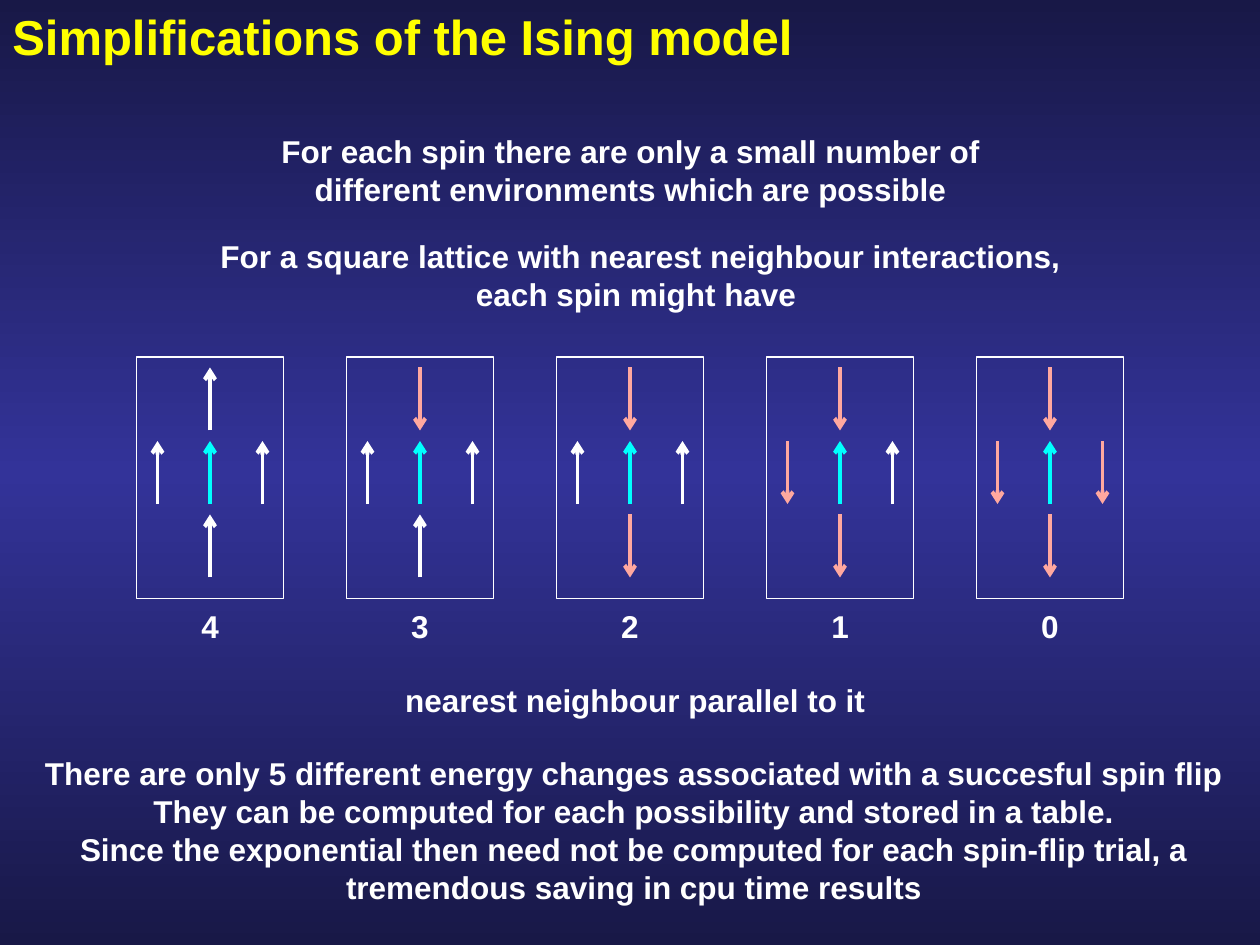
from copy import deepcopy
from dataclasses import dataclass

from pptx import Presentation
from pptx.dml.color import RGBColor
from pptx.enum.shapes import MSO_CONNECTOR, MSO_SHAPE
from pptx.enum.text import MSO_AUTO_SIZE, PP_ALIGN
from pptx.oxml.ns import qn
from pptx.util import Emu, Pt
from lxml.etree import SubElement

EMU_PER_PX = 9525


@dataclass(frozen=True)
class Theme:
    font: str = "Arial"
    title_size: int = 28
    body_size: int = 18
    title: str = "FFFF00"
    text: str = "FFFFFF"
    centre_spin: str = "00FFFF"
    parallel_spin: str = "FFFFFF"
    opposite_spin: str = "FFA89F"
    background_edge: str = "181847"
    background_middle: str = "333399"
    spin_width: float = 2.25
    frame_width: float = 0.75


THEME = Theme()


def px(value):
    return Emu(value * EMU_PER_PX)


def rgb(value):
    return RGBColor.from_string(value)


def paint_background(slide):
    fill = slide.background.fill
    fill.gradient()
    fill.gradient_angle = 90
    first, last = fill.gradient_stops
    first.color.rgb = rgb(THEME.background_edge)
    last.color.rgb = rgb(THEME.background_edge)
    first.position, last.position = 0, 1
    stop_list = slide.element.find(".//" + qn("a:gsLst"))
    stop_list.insert(1, deepcopy(stop_list[0]))
    middle = fill.gradient_stops[1]
    middle.position = 0.5
    middle.color.rgb = rgb(THEME.background_middle)


def add_text(slide, box, lines, size=THEME.body_size, color=THEME.text,
             alignment=PP_ALIGN.CENTER):
    frame = slide.shapes.add_textbox(*map(px, box)).text_frame
    frame.word_wrap = True
    frame.auto_size = MSO_AUTO_SIZE.SHAPE_TO_FIT_TEXT
    for index, line in enumerate(lines):
        paragraph = frame.add_paragraph() if index else frame.paragraphs[0]
        paragraph.alignment = alignment
        run = paragraph.add_run()
        run.text = line
        run.font.name = THEME.font
        run.font.size = Pt(size)
        run.font.bold = True
        run.font.color.rgb = rgb(color)


def add_spin(group, left, top, length, color, up=True):
    start, end = (top + length, top) if up else (top, top + length)
    spin = group.shapes.add_connector(
        MSO_CONNECTOR.STRAIGHT, px(left), px(start), px(left), px(end))
    spin.line.color.rgb = rgb(color)
    spin.line.width = Pt(THEME.spin_width)
    SubElement(spin.line._get_or_add_ln(), qn("a:tailEnd"), type="arrow")
    SubElement(spin.element.spPr, qn("a:effectLst"))


def add_environment(slide, box, parallel_count):
    left, top, width, height = box
    middle, side, length, row_step = width // 2, 40, 48, 56
    first_row = top + 8
    centre = left + middle, first_row + row_step
    neighbours = [
        (centre[0], first_row),
        (centre[0], first_row + 2 * row_step),
        (centre[0] - side, centre[1]),
        (centre[0] + side, centre[1]),
    ]
    opposite_count = len(neighbours) - parallel_count
    group = slide.shapes.add_group_shape()
    add_spin(group, *centre, length, THEME.centre_spin)
    for index, position in enumerate(neighbours):
        up = index >= opposite_count
        color = THEME.parallel_spin if up else THEME.opposite_spin
        add_spin(group, *position, length, color, up)
    frame = group.shapes.add_shape(MSO_SHAPE.RECTANGLE, *map(px, box))
    frame.shadow.inherit = False
    frame.fill.background()
    frame.line.color.rgb = rgb(THEME.text)
    frame.line.width = Pt(THEME.frame_width)

    label_width = 64
    label_box = (centre[0] - label_width // 2, top + height + 2, label_width, 38)
    add_text(slide, label_box, [str(parallel_count)])


def add_environment_row(slide, box):
    left, top, width, height = box
    counts = range(4, -1, -1)
    frame_width = 112
    step = (width - frame_width) // (len(counts) - 1)
    for column, count in enumerate(counts):
        add_environment(
            slide, (left + column * step, top, frame_width, height), count)


def main():
    presentation = Presentation()
    presentation.slide_width, presentation.slide_height = px(960), px(720)
    slide = presentation.slides.add_slide(presentation.slide_layouts[6])
    paint_background(slide)
    add_text(slide, (0, 0, 696, 56), ["Simplifications of the Ising model"],
             THEME.title_size, THEME.title, PP_ALIGN.LEFT)
    add_text(slide, (192, 96, 577, 68), [
        "For each spin there are only a small number of "
        "different environments which are possible"])
    add_text(slide, (136, 176, 704, 68), [
        "For a square lattice with nearest neighbour interactions, "
        "each spin might have "])
    add_environment_row(slide, (104, 272, 752, 184))
    add_text(slide, (232, 514, 504, 38), ["nearest neighbour parallel to it"])
    add_text(slide, (23, 570, 920, 126), [
        "There are only 5 different energy changes associated with a succesful spin flip",
        "They can be computed for each possibility and stored in a table.",
        "Since the exponential then need not be computed for each spin-flip trial, "
        "a tremendous saving in cpu time results"])
    presentation.save("out.pptx")


if __name__ == "__main__":
    main()
